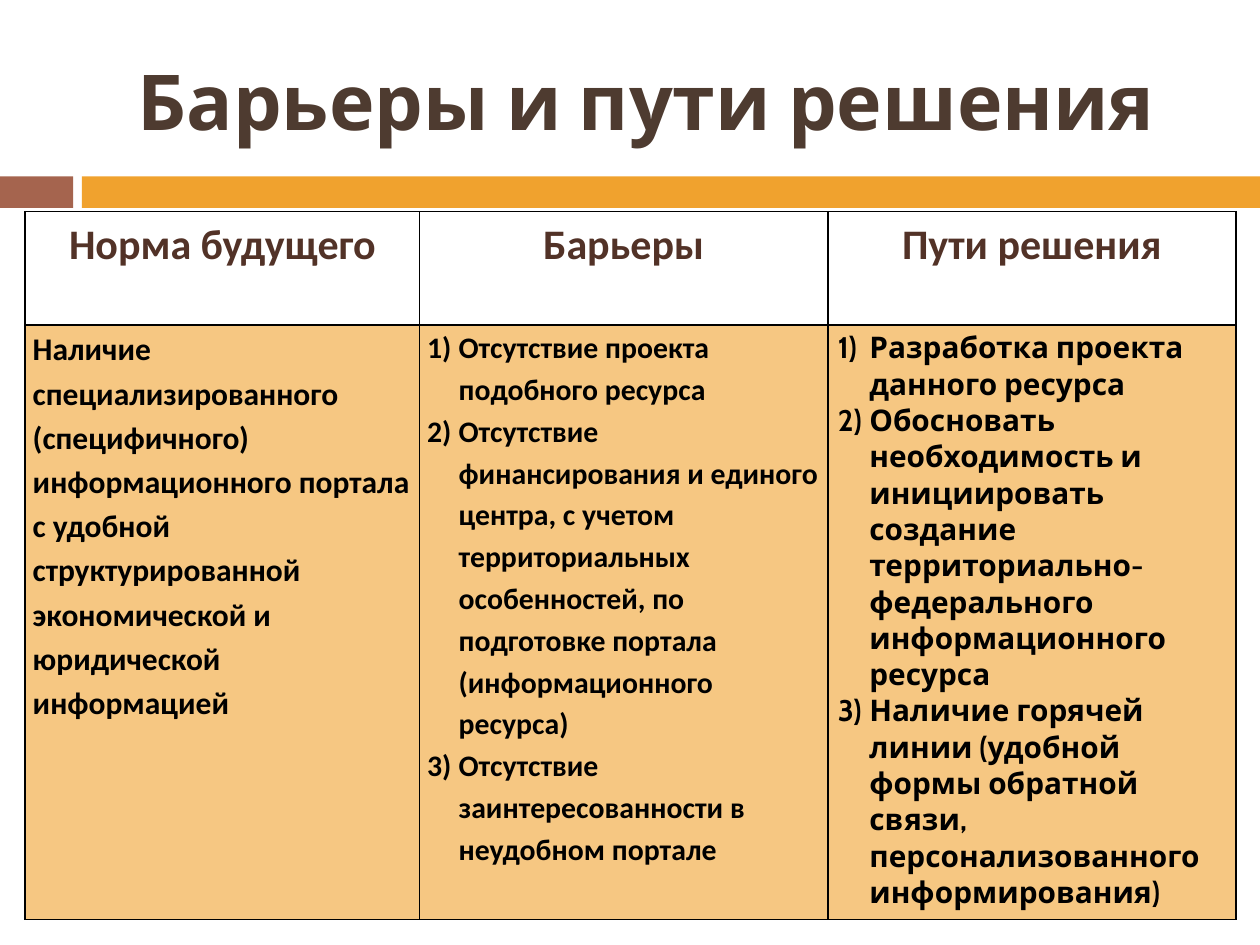
"""Build the slide on barriers and ways to overcome them."""
from lxml.etree import SubElement
from pptx import Presentation
from pptx.dml.color import RGBColor
from pptx.enum.shapes import MSO_SHAPE
from pptx.enum.text import MSO_ANCHOR, PP_ALIGN
from pptx.oxml.ns import qn
from pptx.util import Inches, Pt

COLORS = {
    "accent": "A5644E",
    "band": "F0A22E",
    "title": "4E3B30",
    "heading": "523227",
    "body": "000000",
    "border": "000000",
    "cell": "F6C782",
}
HEADINGS = ["Норма будущего", "Барьеры", "Пути решения"]
NORM = [
    "Наличие специализированного (специфичного) информационного портала с удобной "
    "структурированной экономической и юридической информацией",
]
BARRIERS = [
    "Отсутствие проекта подобного ресурса",
    "Отсутствие финансирования и единого центра, с учетом территориальных особенностей, "
    "по подготовке портала (информационного ресурса)",
    "Отсутствие заинтересованности в неудобном портале",
]
SOLUTIONS = [
    "Разработка проекта данного ресурса",
    "Обосновать необходимость и инициировать создание территориально-федерального "
    "информационного ресурса",
    "Наличие горячей линии (удобной формы обратной связи, персонализованного информирования)",
]


def write_paragraphs(frame, texts, font_name, size, color, align, spacing=None, numbered=False):
    for index, text in enumerate(texts):
        paragraph = frame.paragraphs[0] if index == 0 else frame.add_paragraph()
        paragraph.text = text
        paragraph.alignment = align
        if spacing:
            paragraph.line_spacing = spacing
        if numbered:
            properties = paragraph._p.get_or_add_pPr()
            properties.set("marL", str(Inches(0.25)))
            properties.set("indent", str(Inches(-0.25)))
            SubElement(properties, qn("a:buFont"), typeface="+mj-lt")
            SubElement(properties, qn("a:buAutoNum"), type="arabicParenR")
        paragraph.font.name = font_name
        paragraph.font.size = Pt(size)
        paragraph.font.bold = True
        paragraph.font.color.rgb = RGBColor.from_string(COLORS[color])


def format_cell(cell, side_margin, end_margin, fill=None):
    cell.margin_left = cell.margin_right = Inches(side_margin)
    cell.margin_top = cell.margin_bottom = Inches(end_margin)
    properties = cell._tc.get_or_add_tcPr()
    for side in ("lnL", "lnR", "lnT", "lnB"):
        line = SubElement(properties, qn(f"a:{side}"), w=str(Pt(1)))
        solid = SubElement(line, qn("a:solidFill"))
        SubElement(solid, qn("a:srgbClr"), val=COLORS["border"])
    if fill:
        cell.fill.solid()
        cell.fill.fore_color.rgb = RGBColor.from_string(COLORS[fill])
    else:
        cell.fill.background()


presentation = Presentation()
presentation.slide_width = Inches(10)
presentation.slide_height = Inches(7.5)
slide = presentation.slides.add_slide(presentation.slide_layouts[6])

for left, width, color in [(0, 0.58, "accent"), (0.65, 9.35, "band")]:
    bar = slide.shapes.add_shape(
        MSO_SHAPE.RECTANGLE, Inches(left), Inches(1.4), Inches(width), Inches(0.25)
    )
    bar.shadow.inherit = False
    bar.fill.solid()
    bar.fill.fore_color.rgb = RGBColor.from_string(COLORS[color])
    bar.line.fill.background()

title = slide.shapes.add_textbox(Inches(0.67), Inches(0.25), Inches(8.92), Inches(1.08))
title.text_frame.word_wrap = True
title.text_frame.vertical_anchor = MSO_ANCHOR.MIDDLE
write_paragraphs(
    title.text_frame, ["Барьеры и пути решения"], "Cabin", 44, "title", PP_ALIGN.CENTER
)

table = slide.shapes.add_table(
    2, 3, Inches(0.2), Inches(1.68), Inches(9.61), Inches(5.62)
).table
for column, width in zip(table.columns, [3.13, 3.24, 3.24]):
    column.width = Inches(width)
for row, height in zip(table.rows, [0.9, 4.72]):
    row.height = Inches(height)

for index, heading in enumerate(HEADINGS):
    cell = table.cell(0, index)
    format_cell(cell, 0.06, 0)
    write_paragraphs(
        cell.text_frame, [heading], "Calibri", 24, "heading", PP_ALIGN.CENTER, 1.15
    )

body_columns = [
    (NORM, "Calibri", 18, 1.15, False, 0.06, 0),
    (BARRIERS, "Calibri", 17, 1.15, True, 0.06, 0),
    (SOLUTIONS, "Cabin", 17, None, True, 0.08, 0.04),
]
for index, (texts, font_name, size, spacing, numbered, side, end) in enumerate(body_columns):
    cell = table.cell(1, index)
    format_cell(cell, side, end, "cell")
    write_paragraphs(
        cell.text_frame, texts, font_name, size, "body", PP_ALIGN.LEFT, spacing, numbered
    )

presentation.save("out.pptx")
